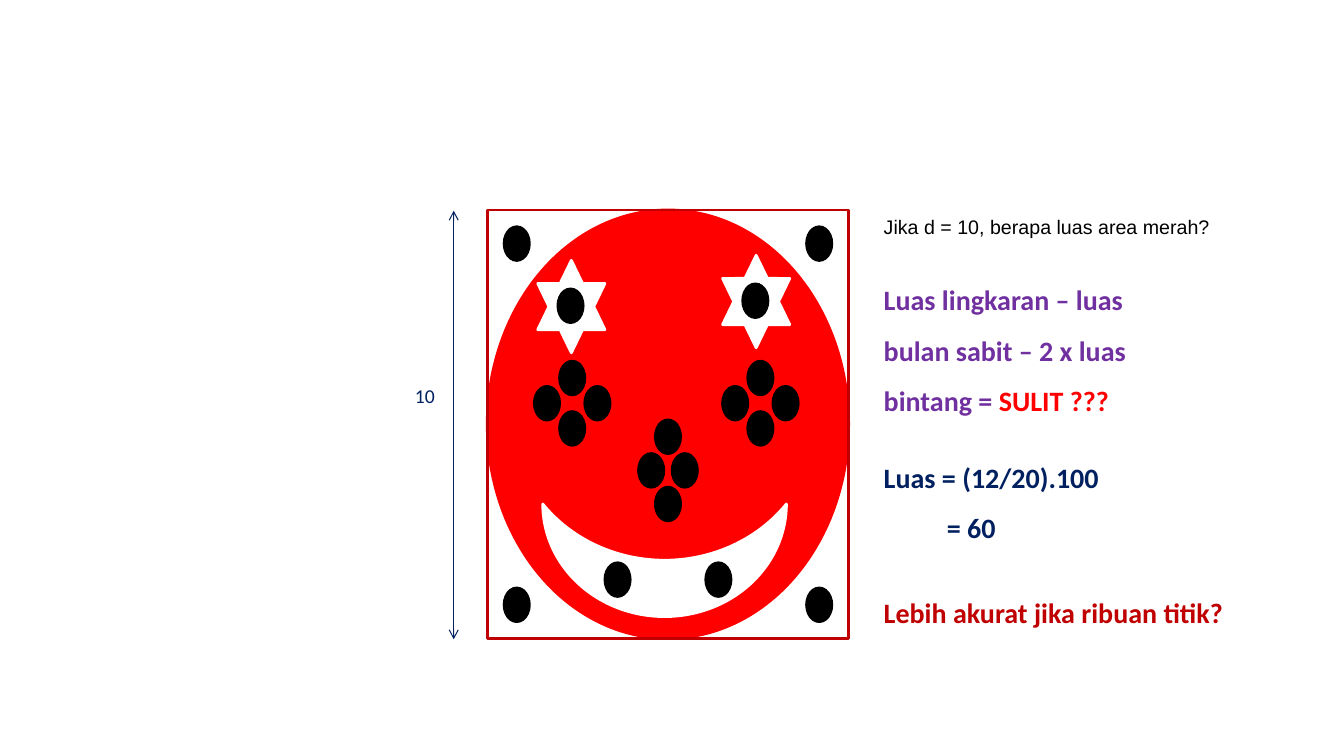
"""Builds the slide that estimates the red area of a face by counting dots."""
from dataclasses import dataclass

from pptx import Presentation
from pptx import util as u
from pptx.dml.color import RGBColor
from pptx.enum import shapes, text
from pptx.oxml.ns import qn
from lxml import etree

SHAPE = shapes.MSO_SHAPE


@dataclass(frozen=True)
class Theme:
    """Colours, fonts and type sizes of the slide."""
    red: str = "FF0000"
    crimson: str = "C00000"
    black: str = "000000"
    white: str = "FFFFFF"
    purple: str = "7030A0"
    navy: str = "002060"
    body: str = "Calibri"
    plain: str = "Arial"
    large: int = 20
    small: int = 14
    outline: float = 2
    thin: float = 0.75


class Canvas:
    """Draws on one slide, in cells of a grid of 160 columns by 90 rows."""
    cell = u.Inches(1) / 12

    def __init__(self, slide, theme):
        """Keeps the slide and its theme."""
        self.s, self.theme = slide, theme

    def cells(self, *counts):
        """Turns counts of cells into lengths."""
        return [u.Emu(round(n * self.cell)) for n in counts]

    def shape(self, kind, box, fill, line, rotation=0):
        """Adds a preset shape, hollow when fill is None."""
        sp = self.s.shapes.add_shape(kind, *self.cells(*box))
        sp.shadow.inherit = False
        sp.rotation = rotation
        if fill:
            sp.fill.solid()
            sp.fill.fore_color.rgb = RGBColor.from_string(fill)
        else:
            sp.fill.background()
        sp.line.color.rgb = RGBColor.from_string(line)
        sp.line.width = u.Pt(self.theme.outline)
        etree.SubElement(sp.line._get_or_add_ln(), qn("a:round"))

    def dots(self, places):
        """Adds a black dot at each column and row."""
        for col, row in places:
            self.shape(SHAPE.OVAL, (col, row, 3, 4), self.theme.black, self.theme.black)

    def diamond(self, col, row, dx, dy):
        """Adds four dots around a middle place."""
        self.dots([(col - dx, row), (col, row - dy), (col + dx, row), (col, row + dy)])

    def text(self, box, lines, color, size, font, bold=False, spacing=None, wrap=True):
        """Adds lines of (indent, runs), each run being (words, own colour or None)."""
        tf = self.s.shapes.add_textbox(*self.cells(*box)).text_frame
        tf.word_wrap = wrap
        tf.auto_size = text.MSO_AUTO_SIZE.SHAPE_TO_FIT_TEXT
        for i, (indent, runs) in enumerate(lines):
            p = tf.add_paragraph() if i else tf.paragraphs[0]
            if indent:
                p._p.get_or_add_pPr().set("marL", str(self.cells(indent)[0]))
            p.line_spacing = spacing
            p.font.name, p.font.size, p.font.bold = font, u.Pt(size), bold
            p.font.color.rgb = RGBColor.from_string(color)
            for words, own in runs:
                r = p.add_run()
                r.text = words
                if own:
                    r.font.color.rgb = RGBColor.from_string(own)

    def double_arrow(self, start, end, color):
        """Adds a thin line with an open arrowhead at both ends."""
        c = self.s.shapes.add_connector(shapes.MSO_CONNECTOR.STRAIGHT, *self.cells(*start, *end))
        c.line.color.rgb = RGBColor.from_string(color)
        c.line.width = u.Pt(self.theme.thin)
        ln = c.line._get_or_add_ln()
        for tag in ("a:headEnd", "a:tailEnd"):
            etree.SubElement(ln, qn(tag), type="arrow")
        etree.SubElement(c._element.spPr, qn("a:effectLst"))


def draw_face(canvas):
    """Draws the face, its square and all twenty-two dots."""
    t = canvas.theme
    frame = (58, 25, 43, 51)
    canvas.shape(SHAPE.OVAL, frame, t.red, t.red)
    canvas.shape(SHAPE.RECTANGLE, frame, None, t.crimson)
    for cheek in (66.6, 89):
        canvas.diamond(cheek, 46, 3, 3)
    canvas.diamond(78, 54, 2, 4)
    canvas.dots((col, row) for col in (60, 96) for row in (27, 70))
    canvas.shape(SHAPE.MOON, (72.4, 52.2, 13.4, 29), t.white, t.white, rotation=270)
    for col, row in ((86, 30.4), (64, 31)):
        canvas.shape(SHAPE.STAR_6_POINT, (col, row, 8, 11), t.white, t.white)
        canvas.dots([(col + 2.4, row + 3.4)])
    canvas.dots((col, 67) for col in (72, 84))


def draw_notes(canvas):
    """Writes the question, the reasoning and the measure of the square."""
    t = canvas.theme
    canvas.double_arrow((54, 25.1), (54, 76.1), t.navy)
    canvas.text((48.2, 45.1, 4.8, 4), [(0, [("10", None)])], t.navy, t.small, t.body, wrap=False)
    canvas.text((104, 25, 41.4, 4), [(0, [("Jika d = 10, berapa luas area merah?", None)])],
                t.black, t.small, t.plain, wrap=False)
    formula = [("Luas lingkaran – luas bulan sabit – 2 x luas bintang = ", None),
               ("SULIT ???", t.red)]
    result = [(0, [("Luas = (12/20).100", None)]), (7.5, [("= 60", None)])]
    closing = [(0, [("Lebih akurat jika ribuan titik?", None)])]
    for box, lines, color in (
        ((104, 31.1, 32, 19.4), [(0, formula)], t.purple),
        ((104, 52.2, 32, 13.3), result, t.navy),
        ((104, 68.3, 43.7, 7.3), closing, t.crimson),
    ):
        canvas.text(box, lines, color, t.large, t.body, bold=True, spacing=1.5)


def main():
    """Builds and saves the slide."""
    prs = Presentation()
    prs.slide_width, prs.slide_height = u.Inches(13.33), u.Inches(7.5)
    canvas = Canvas(prs.slides.add_slide(prs.slide_layouts[6]), Theme())
    draw_face(canvas)
    draw_notes(canvas)
    prs.save("out.pptx")


if __name__ == "__main__":
    main()
